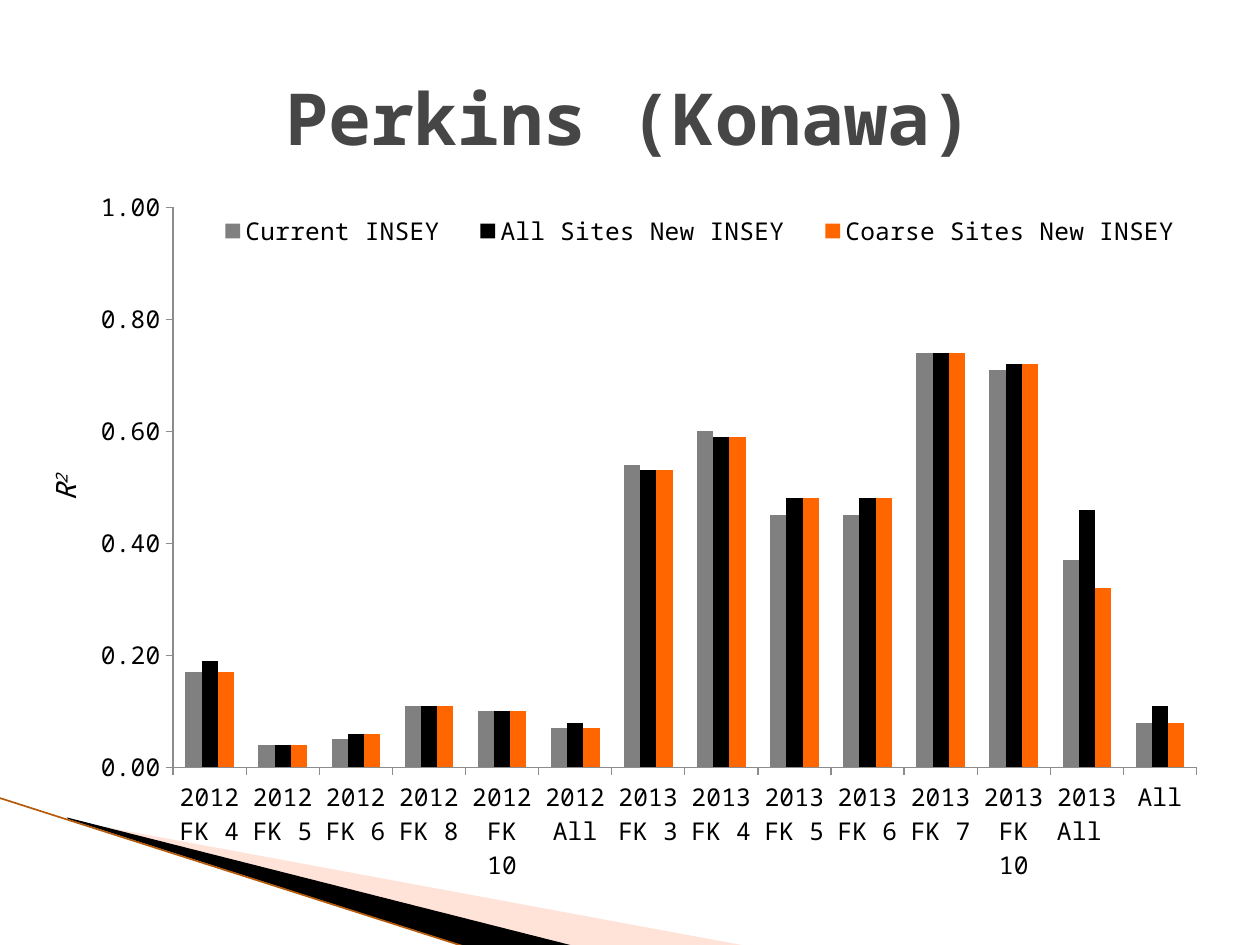
from lxml import etree
from pptx import Presentation
from pptx import util as u
from pptx.chart.data import CategoryChartData
from pptx.dml.color import RGBColor
from pptx.enum import chart as charts
from pptx.enum import shapes, text
from pptx.oxml import ns

THEME = {
    "font": "Noto Sans Mono",
    "title": ("464646", 41),
    "label": ("000000", 16),
    "chart": ("000000", 14),
    "axis": "8C8C8C",
    "edge": "B45A0A",
}
CATEGORIES = [
    "2012 FK 4", "2012 FK 5", "2012 FK 6", "2012 FK 8", "2012 FK 10", "2012 All",
    "2013 FK 3", "2013 FK 4", "2013 FK 5", "2013 FK 6", "2013 FK 7", "2013 FK 10",
    "2013 All ", "All",
]
SERIES = [
    ("Current INSEY", "808080",
     (0.17, 0.04, 0.05, 0.11, 0.1, 0.07, 0.54, 0.6, 0.45, 0.45, 0.74, 0.71, 0.37, 0.08)),
    ("All Sites New INSEY", "000000",
     (0.19, 0.04, 0.06, 0.11, 0.1, 0.08, 0.53, 0.59, 0.48, 0.48, 0.74, 0.72, 0.46, 0.11)),
    ("Coarse Sites New INSEY", "FF6600",
     (0.17, 0.04, 0.06, 0.11, 0.1, 0.07, 0.53, 0.59, 0.48, 0.48, 0.74, 0.72, 0.32, 0.08)),
]
WEDGES = [
    ("FFBAA2", 40, [(1.4, 16.54), (15.11, 19.08), (11.58, 19.08), (1.4, 16.51)]),
    ("000000", 100, [(1.35, 16.48), (11.61, 19.08), (9.45, 19.1), (1.37, 16.51)]),
]
EDGE = (-0.03, 16.08, 9.42, 19.1)
CHART_BOX = (1.07, 3.38, 23.5, 15.04)
PLOT_LAYOUT = (0.103, 0.053, 0.878, 0.751)
LEGEND_LAYOUT = (0.12, 0.05, 0.87, 0.07)
TITLE_BOX = (1.27, 0.76, 22.86, 3.18)
LABEL_BOX = (-4.5, 9.37, 11.63, 0.94)


def cm(values):
    return [u.Cm(value) for value in values]


def style(font, kind):
    color, size = THEME[kind]
    font.name = THEME["font"]
    font.size = u.Pt(size)
    font.color.rgb = RGBColor.from_string(color)


def add_wedge(page, color, opacity, points):
    start, *rest = [cm(point) for point in points]
    builder = page.shapes.build_freeform(*start)
    builder.add_line_segments(rest)
    wedge = builder.convert_to_shape()
    wedge.shadow.inherit = False
    wedge.line.fill.background()
    wedge.fill.solid()
    wedge.fill.fore_color.rgb = RGBColor.from_string(color)
    if opacity < 100:
        fill = wedge._element.spPr.find(ns.qn("a:solidFill"))
        etree.SubElement(fill[0], ns.qn("a:alpha"), val=str(opacity * 1000))


def add_edge(page):
    edge = page.shapes.add_connector(shapes.MSO_CONNECTOR.STRAIGHT, *cm(EDGE))
    edge.line.color.rgb = RGBColor.from_string(THEME["edge"])
    edge.line.width = u.Pt(0.95)
    etree.SubElement(edge._element.spPr, ns.qn("a:effectLst"))


def add_text(page, place, kind, spans, anchor):
    box = page.shapes.add_textbox(*cm(place))
    frame = box.text_frame
    frame.word_wrap = True
    frame.vertical_anchor = anchor
    para = frame.paragraphs[0]
    para.alignment = text.PP_ALIGN.CENTER
    for words in spans:
        span = para.add_run()
        span.text = words
        style(span.font, kind)
    return box


def set_layout(parent, position, values, inner=False):
    for old in parent.findall(ns.qn("c:layout")):
        parent.remove(old)
    layout = etree.Element(ns.qn("c:layout"))
    manual = etree.SubElement(layout, ns.qn("c:manualLayout"))
    settings = [("layoutTarget", "inner")] if inner else []
    settings += [("xMode", "edge"), ("yMode", "edge")]
    settings += zip("xywh", values)
    for name, value in settings:
        etree.SubElement(manual, ns.qn("c:" + name), val=str(value))
    parent.insert(position, layout)


def add_bars(page):
    data = CategoryChartData(number_format="0.00")
    data.categories = CATEGORIES
    for name, _, values in SERIES:
        data.add_series(name, values)
    kind = charts.XL_CHART_TYPE.COLUMN_CLUSTERED
    chart = page.shapes.add_chart(kind, *cm(CHART_BOX), data).chart
    chart.has_title = False
    style(chart.font, "chart")
    plot = chart.plots[0]
    plot.gap_width = 150
    plot.overlap = 0
    plot.vary_by_categories = False
    for series, (_, color, _) in zip(plot.series, SERIES):
        series.format.fill.solid()
        series.format.fill.fore_color.rgb = RGBColor.from_string(color)
    for axis in (chart.category_axis, chart.value_axis):
        axis.has_major_gridlines = False
        axis.major_tick_mark = charts.XL_TICK_MARK.OUTSIDE
        axis.minor_tick_mark = charts.XL_TICK_MARK.NONE
        axis.format.line.color.rgb = RGBColor.from_string(THEME["axis"])
        style(axis.tick_labels.font, "chart")
    scale = chart.value_axis
    scale.minimum_scale, scale.maximum_scale, scale.major_unit = 0, 1, 0.2
    scale.tick_labels.number_format = "#,##0.00"
    scale.tick_labels.number_format_is_linked = False
    chart.has_legend = True
    legend = chart.legend
    legend.position = charts.XL_LEGEND_POSITION.RIGHT
    legend.include_in_layout = False
    style(legend.font, "chart")
    set_layout(legend._element, 1, LEGEND_LAYOUT)
    set_layout(chart._chartSpace.chart.plotArea, 0, PLOT_LAYOUT, inner=True)


def main():
    deck = Presentation()
    deck.slide_width, deck.slide_height = cm((25.4, 19.05))
    page = deck.slides.add_slide(deck.slide_layouts[6])
    for wedge in WEDGES:
        add_wedge(page, *wedge)
    add_edge(page)
    add_bars(page)
    title = add_text(page, TITLE_BOX, "title", ["Perkins (Konawa)"], text.MSO_ANCHOR.MIDDLE)
    title.text_frame.paragraphs[0].runs[0].font.bold = True
    label = add_text(page, LABEL_BOX, "label", ["R", "2"], text.MSO_ANCHOR.TOP)
    label.rotation = 270
    spans = label.text_frame.paragraphs[0].runs
    for span in spans:
        span.font.italic = True
    spans[1]._r.get_or_add_rPr().set("baseline", "30000")
    deck.save("out.pptx")


if __name__ == "__main__":
    main()
